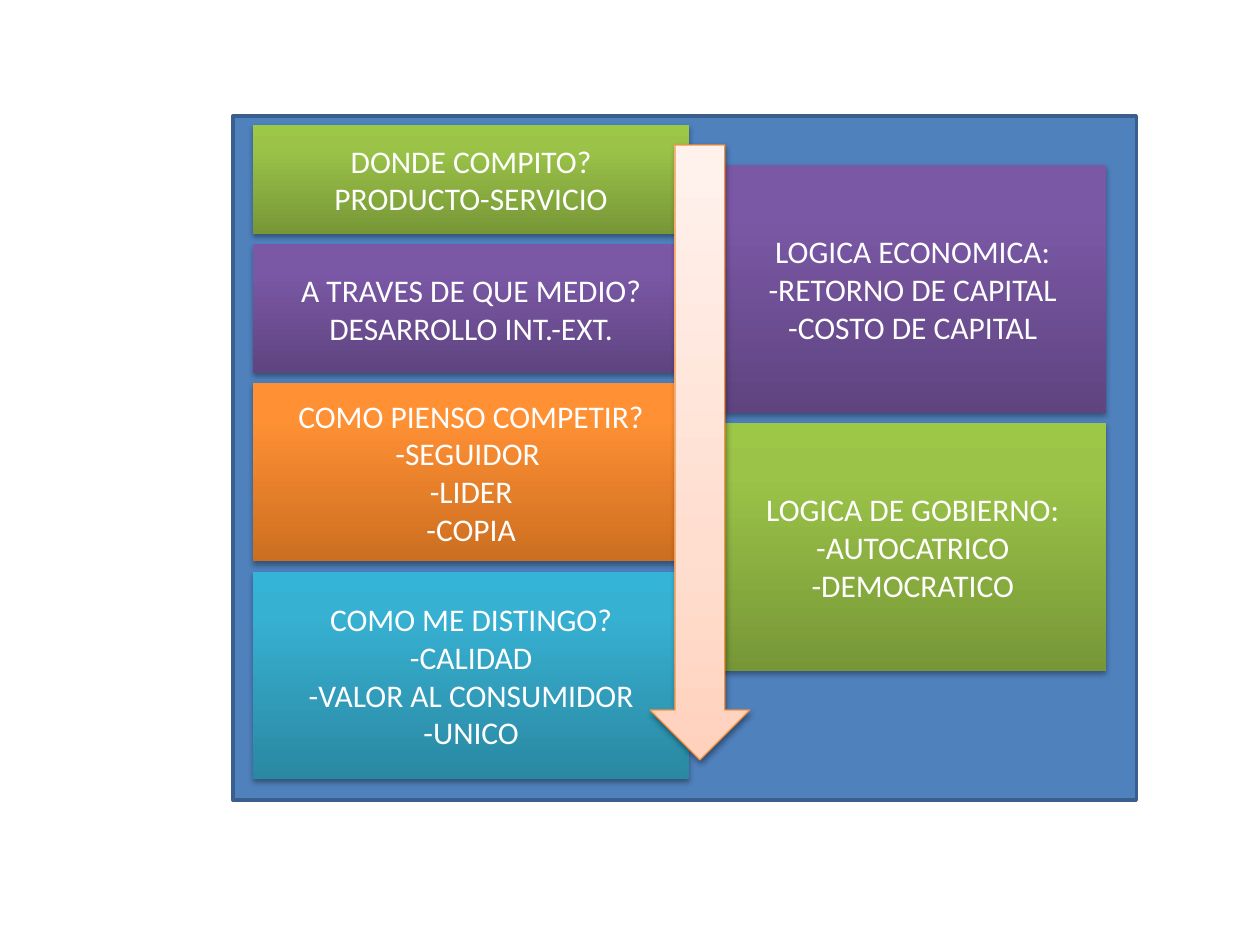
from copy import deepcopy

from lxml.etree import SubElement
from pptx import Presentation
from pptx.dml.color import RGBColor
from pptx.enum.shapes import MSO_SHAPE
from pptx.enum.text import MSO_ANCHOR, PP_ALIGN
from pptx.oxml.ns import qn
from pptx.util import Pt

GREEN = [(0, "779737"), (0.8, "9BC348"), (1, "9DC746")]
PURPLE = [(0, "5F4480"), (0.8, "7B58A6"), (1, "7C57A8")]
ORANGE = [(0, "CC6E20"), (0.8, "FF9034"), (1, "FF9136")]
TEAL = [(0, "2A88A2"), (0.8, "37B1D2"), (1, "34B4D6")]
PEACH = [(0, "FFD2BD"), (0.35, "FFDED0"), (1, "FFF2ED")]
GAP = 5.7

# Each block: height, gradient, lines
QUESTIONS = [
    (62.6, GREEN, ["DONDE COMPITO?", "PRODUCTO-SERVICIO"]),
    (73.4, PURPLE, ["A TRAVES DE QUE MEDIO?", "DESARROLLO INT.-EXT."]),
    (102.2, ORANGE, ["COMO PIENSO COMPETIR?", "-SEGUIDOR ", "-LIDER", "-COPIA"]),
    (118.8, TEAL, ["COMO ME DISTINGO?", "-CALIDAD", "-VALOR AL CONSUMIDOR", "-UNICO"]),
]
LOGICS = [
    (141.8, PURPLE, ["LOGICA ECONOMICA:", "-RETORNO DE CAPITAL", "-COSTO DE CAPITAL"]),
    (141.8, GREEN, ["LOGICA DE GOBIERNO:", "-AUTOCATRICO", "-DEMOCRATICO"]),
]


def color(value):
    return RGBColor.from_string(value)


def add_preset(slide, preset, left, top, width, height):
    shape = slide.shapes.add_shape(preset, Pt(left), Pt(top), Pt(width), Pt(height))
    shape.shadow.inherit = False
    return shape


def fill_upward(shape, stops):
    """Apply a three-stop gradient that runs from bottom to top."""
    fill = shape.fill
    fill.gradient()
    fill.gradient_angle = 90
    stop_list = shape._element.spPr.find(".//" + qn("a:gsLst"))
    stop_list.append(deepcopy(stop_list[-1]))
    for stop, (position, value) in zip(fill.gradient_stops, stops):
        stop.position = position
        stop.color.rgb = color(value)


def add_shadow(shape, opacity, distance):
    effects = shape._element.spPr.find(qn("a:effectLst"))
    shadow = SubElement(effects, qn("a:outerShdw"), blurRad=str(Pt(3.1)),
                        dist=str(Pt(distance)), dir="5400000", rotWithShape="0")
    black = SubElement(shadow, qn("a:srgbClr"), val="000000")
    SubElement(black, qn("a:alpha"), val=str(opacity * 1000))


def add_block(slide, left, top, width, height, stops, lines):
    block = add_preset(slide, MSO_SHAPE.RECTANGLE, left, top, width, height)
    fill_upward(block, stops)
    block.line.fill.background()
    add_shadow(block, 35, 1.8)
    frame = block.text_frame
    frame.word_wrap = True
    frame.vertical_anchor = MSO_ANCHOR.MIDDLE
    frame.text = "\n".join(lines)
    for paragraph in frame.paragraphs:
        paragraph.alignment = PP_ALIGN.CENTER
        font = paragraph.runs[0].font
        font.name = "Calibri"
        font.size = Pt(18)
        font.color.rgb = color("FFFFFF")


def add_column(slide, left, top, width, blocks):
    for height, stops, lines in blocks:
        add_block(slide, left, top, width, height, stops, lines)
        top += height + GAP


def add_down_arrow(slide, left, top, width, height):
    arrow = add_preset(slide, MSO_SHAPE.DOWN_ARROW, left, top, width, height)
    fill_upward(arrow, PEACH)
    arrow.line.color.rgb = color("F69240")
    arrow.line.width = Pt(0.75)
    add_shadow(arrow, 38, 1.6)


def add_strategy_panel(slide, left, top, width, height):
    panel = add_preset(slide, MSO_SHAPE.RECTANGLE, left, top, width, height)
    panel.fill.solid()
    panel.fill.fore_color.rgb = color("4F81BD")
    panel.line.color.rgb = color("3A5F8C")
    panel.line.width = Pt(2)
    add_column(slide, left + 11.5, top + 5.1, 249.1, QUESTIONS)
    add_column(slide, left + 277.9, top + 28.1, 221, LOGICS)
    add_down_arrow(slide, left + 238.3, top + 16.6, 56.9, 351.4)


def main():
    presentation = Presentation()
    presentation.slide_width = Pt(720)
    presentation.slide_height = Pt(540)
    slide = presentation.slides.add_slide(presentation.slide_layouts[6])
    add_strategy_panel(slide, 133.2, 66.2, 516.2, 391)
    presentation.save("out.pptx")


if __name__ == "__main__":
    main()
